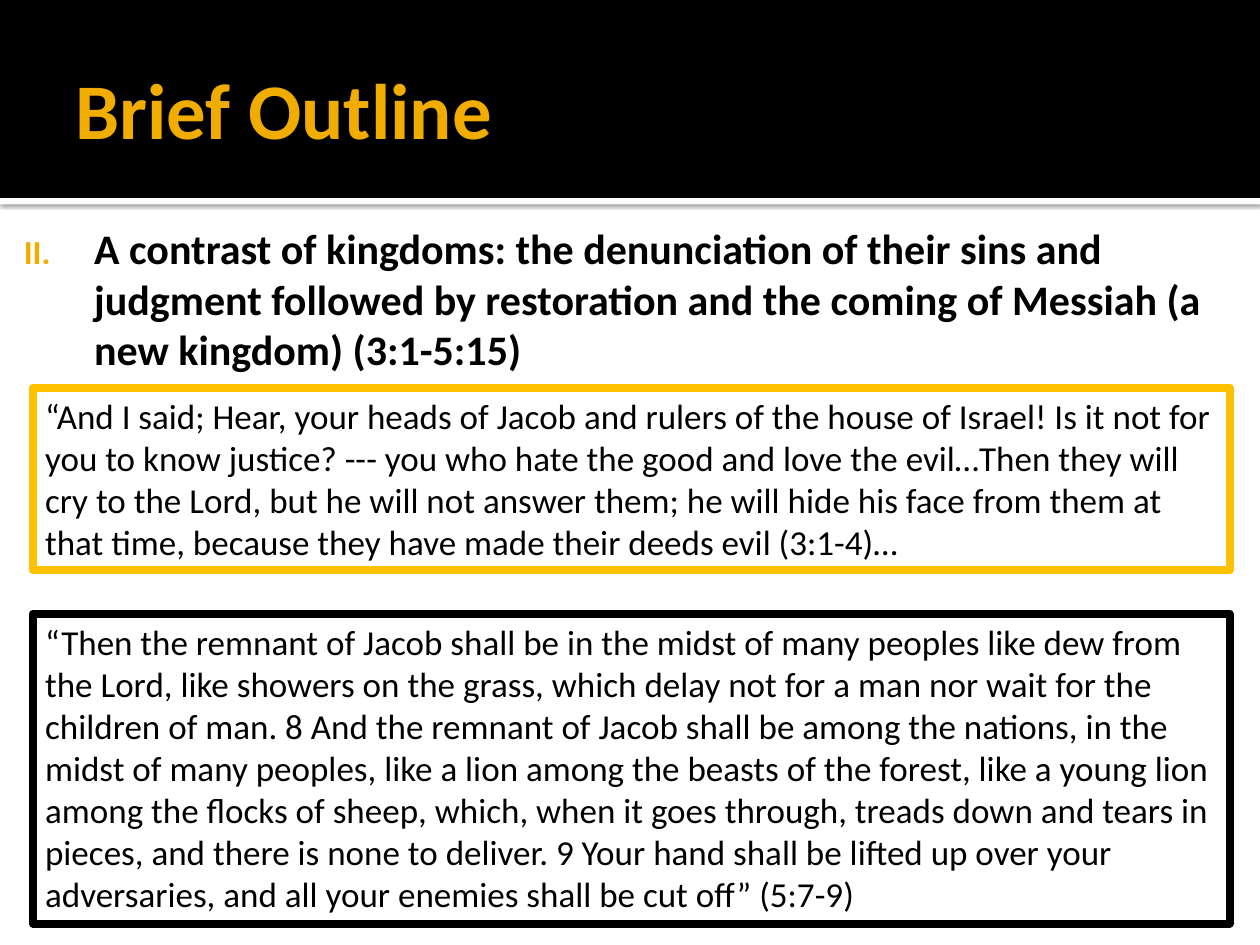
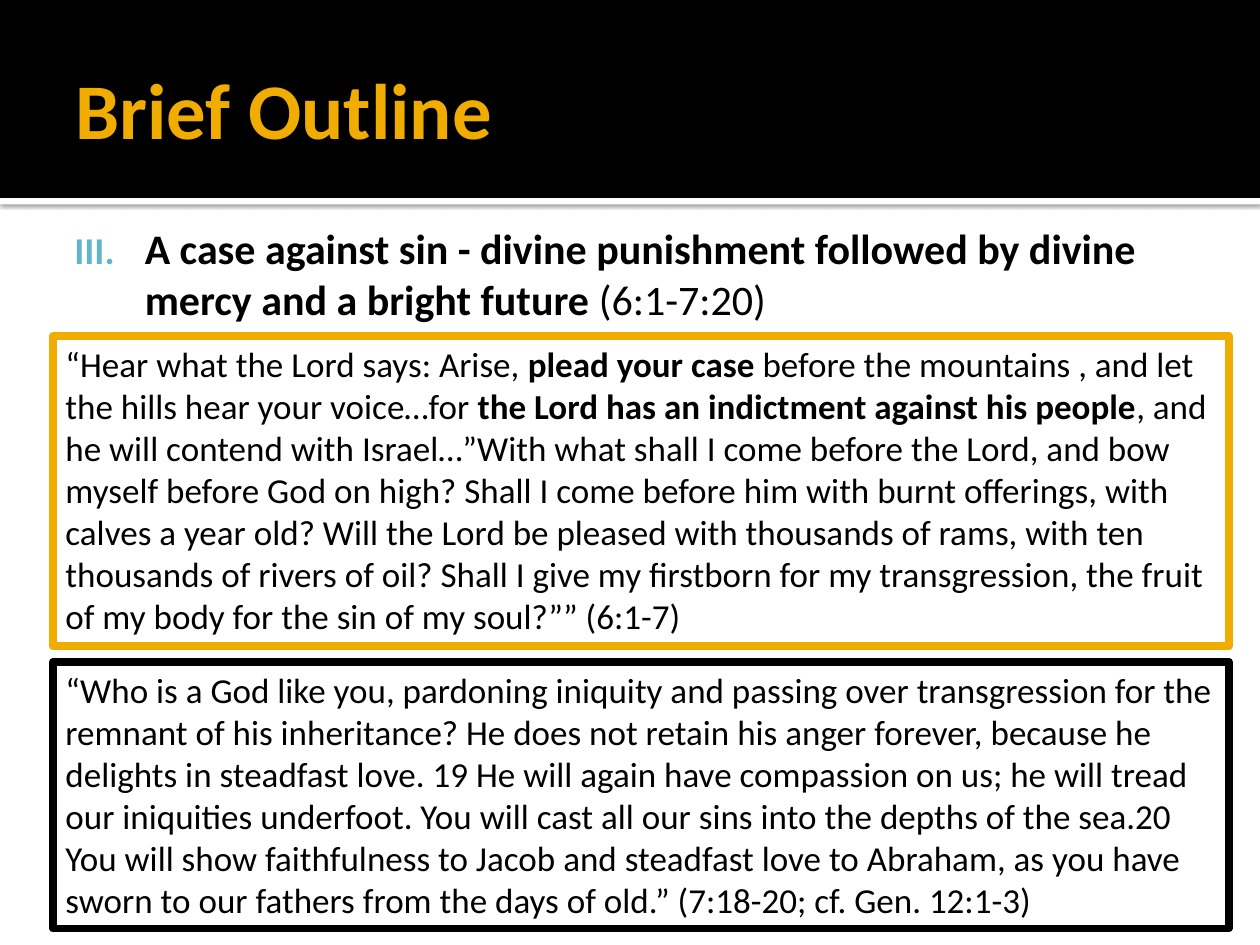
from lxml import etree
from pptx import Presentation
from pptx import util as u
from pptx.dml.color import RGBColor
from pptx.enum import shapes, text
from pptx.oxml.ns import qn

BLACK = RGBColor(0x00, 0x00, 0x00)
WHITE = RGBColor(0xFF, 0xFF, 0xFF)
GOLD = RGBColor(0xF0, 0xAD, 0x00)
AMBER = RGBColor(0xFF, 0xC0, 0x00)
TEAL = RGBColor(0x60, 0xB5, 0xCC)

FONT = "Calibri"
WIDTH, HEIGHT = 25.4, 19.05
BAND_HEIGHT = 3.99
BODY_TOP = 4.24


def write(box, spans, size=20, color=BLACK, bold=False, anchor=text.MSO_ANCHOR.TOP,
          insets=(0.25, 0.13, 0.25, 0.13)):
    """Write one paragraph; spans is a string or a list of (words, bold)."""
    frame = box.text_frame
    frame.word_wrap = True
    frame.vertical_anchor = anchor
    (frame.margin_left, frame.margin_top,
     frame.margin_right, frame.margin_bottom) = map(u.Cm, insets)
    para = frame.paragraphs[0]
    para.alignment = text.PP_ALIGN.LEFT
    for words, heavy in [(spans, bold)] if isinstance(spans, str) else spans:
        span = para.add_run()
        span.text = words
        span.font.name = FONT
        span.font.size = u.Pt(size)
        span.font.bold = heavy
        span.font.color.rgb = color
    return para


def add_xml(parent, tag, **attributes):
    return etree.SubElement(parent, qn(tag), {k: str(v) for k, v in attributes.items()})


class Outline:
    """Holds the shared style and the current slide."""

    def __init__(self):
        self.deck = Presentation()
        self.deck.slide_width, self.deck.slide_height = u.Cm(WIDTH), u.Cm(HEIGHT)
        self.page = None

    def new_page(self, title):
        self.page = self.deck.slides.add_slide(self.deck.slide_layouts[6])
        stripe = self.rect(0, BAND_HEIGHT, WIDTH, 0.13, fill=WHITE)
        self.shadow(stripe)
        self.rect(0, 0, WIDTH, BAND_HEIGHT, fill=BLACK)
        box = self.text_box(1.27, 0.43, 22.86, 3.48)
        write(box, title, size=45, color=GOLD, bold=True,
              anchor=text.MSO_ANCHOR.MIDDLE, insets=(0.25, 0.13, 0.13, 0.13))

    def text_box(self, left, top, width, height):
        return self.page.shapes.add_textbox(*map(u.Cm, (left, top, width, height)))

    def rect(self, left, top, width, height, fill=None, line=None):
        shape = self.page.shapes.add_shape(
            shapes.MSO_SHAPE.RECTANGLE, *map(u.Cm, (left, top, width, height)))
        shape.shadow.inherit = False
        if fill is None:
            shape.fill.background()
        else:
            shape.fill.solid()
            shape.fill.fore_color.rgb = fill
        if line is None:
            shape.line.fill.background()
        else:
            shape.line.color.rgb = line
            shape.line.width = u.Pt(4.5)
            add_xml(shape.line._get_or_add_ln(), "a:round")
        return shape

    def shadow(self, shape):
        effects = shape._element.spPr.find(qn("a:effectLst"))
        outer = add_xml(effects, "a:outerShdw", blurRad=u.Pt(2.5), dist=u.Pt(0.8),
                        dir=90 * 60000, algn="tl", rotWithShape=0)
        color = add_xml(outer, "a:srgbClr", val=BLACK)
        add_xml(color, "a:alpha", val=60000)

    def heading(self, spans, number, left, indent, bullet_color, bullet_percent):
        box = self.text_box(left, BODY_TOP, WIDTH - left, 14.38)
        para = write(box, spans, size=24, bold=True, insets=(0.15, 0.25, 0.25, 0.13))
        # Roman numeral with a hanging indent
        props = para._p.get_or_add_pPr()
        props.set("marL", str(u.Cm(indent)))
        props.set("indent", str(u.Cm(-1.42)))
        add_xml(add_xml(props, "a:buClr"), "a:srgbClr", val=bullet_color)
        add_xml(props, "a:buSzPct", val=bullet_percent * 1000)
        add_xml(props, "a:buAutoNum", type="romanUcPeriod", startAt=number)

    def quote(self, spans, left, top, width, height, line):
        write(self.rect(left, top, width, height, line=line), spans)


def main():
    outline = Outline()

    # Contrast of kingdoms
    outline.new_page("Brief Outline")
    outline.heading(
        "A contrast of kingdoms: the denunciation of their sins and judgment followed by "
        "restoration and the coming of Messiah (a new kingdom) (3:1-5:15)",
        number=2, left=0, indent=1.75, bullet_color=GOLD, bullet_percent=80)
    outline.quote(
        "“Then the remnant of Jacob shall be in the midst of many peoples like dew from the "
        "Lord, like showers on the grass, which delay not for a man nor wait for the children "
        "of man. 8 And the remnant of Jacob shall be among the nations, in the midst of many "
        "peoples, like a lion among the beasts of the forest, like a young lion among the "
        "flocks of sheep, which, when it goes through, treads down and tears in pieces, and "
        "there is none to deliver. 9 Your hand shall be lifted up over your adversaries, and "
        "all your enemies shall be cut off” (5:7-9)",
        0.66, 12.37, 24.13, 6.25, BLACK)
    outline.quote(
        "“And I said; Hear, your heads of Jacob and rulers of the house of Israel! Is it not "
        "for you to know justice? --- you who hate the good and love the evil…Then they will "
        "cry to the Lord, but he will not answer them; he will hide his face from them at "
        "that time, because they have made their deeds evil (3:1-4)…",
        0.66, 7.82, 24.13, 3.68, AMBER)

    # Case against sin
    outline.new_page("Brief Outline")
    outline.heading(
        [("A case against sin - divine punishment followed by divine mercy and a bright "
          "future", True), (" (6:1-7:20)", False)],
        number=3, left=0.2, indent=2.57, bullet_color=TEAL, bullet_percent=90)
    outline.quote(
        [("“Hear what the Lord says: Arise, ", False),
         ("plead your case ", True),
         ("before the mountains , and let the hills hear your voice…for ", False),
         ("the Lord has an indictment against his people", True),
         (", and he will contend with Israel…”With what shall I come before the Lord, and bow "
          "myself before God on high? Shall I come before him with burnt offerings, with "
          "calves a year old? Will the Lord be pleased with thousands of rams, with ten "
          "thousands of rivers of oil? Shall I give my firstborn for my transgression, the "
          "fruit of my body for the sin of my soul?”” (6:1-7)", False)],
        1.07, 6.78, 23.7, 6.25, GOLD)
    outline.quote(
        "“Who is a God like you, pardoning iniquity and passing over transgression for the "
        "remnant of his inheritance? He does not retain his anger forever, because he "
        "delights in steadfast love. 19 He will again have compassion on us; he will tread "
        "our iniquities underfoot. You will cast all our sins into the depths of the sea.20 "
        "You will show faithfulness to Jacob and steadfast love to Abraham, as you have sworn "
        "to our fathers from the days of old.” (7:18-20; cf. Gen. 12:1-3)",
        1.07, 13.34, 23.7, 5.38, BLACK)

    outline.deck.save("out.pptx")


if __name__ == "__main__":
    main()
